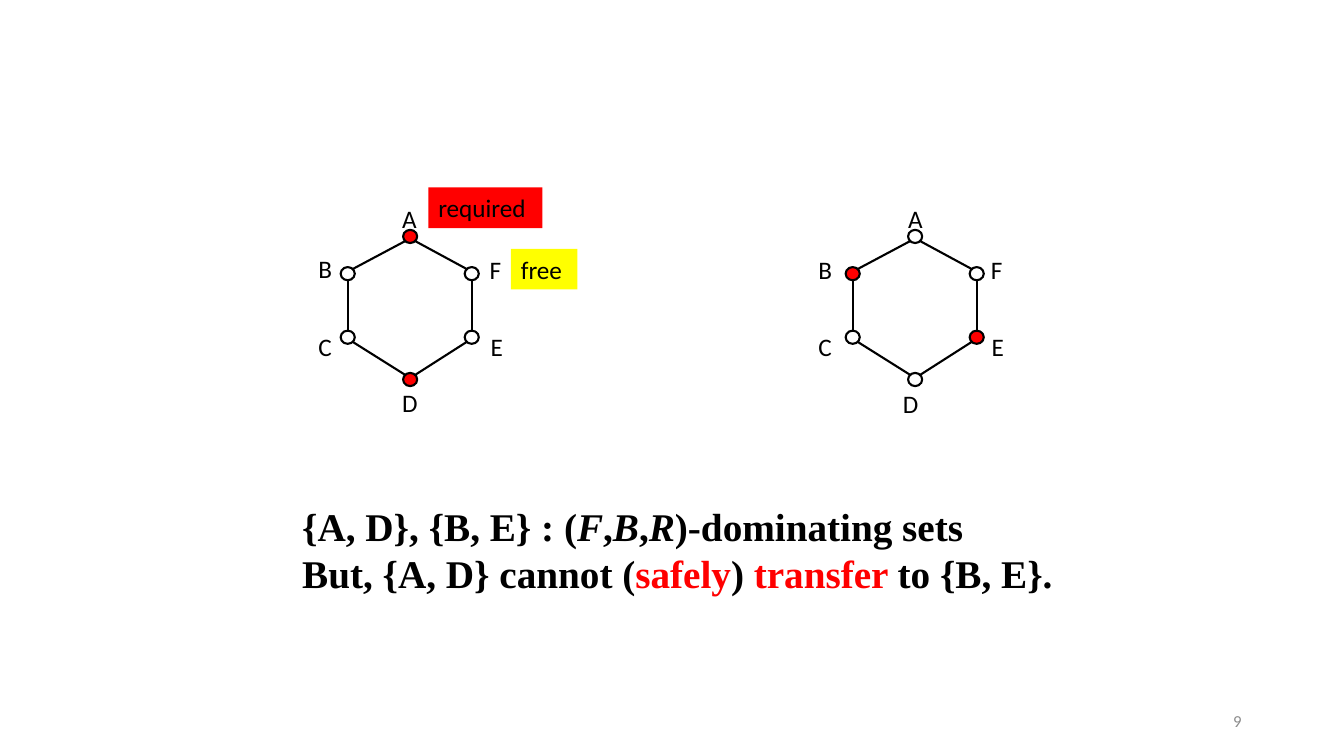
import math
import pptx
import pptx.util
import pptx.dml.color
import pptx.enum.shapes
import pptx.enum.text
import pptx.oxml

Pt = pptx.util.Pt
RGB = pptx.dml.color.RGBColor
Shape = pptx.enum.shapes.MSO_SHAPE
Align = pptx.enum.text.PP_ALIGN
Anchor = pptx.enum.text.MSO_ANCHOR

BLACK = RGB(0, 0, 0)
WHITE = RGB(255, 255, 255)
RED = RGB(255, 0, 0)
YELLOW = RGB(255, 255, 0)
GRAY = RGB(0x8C, 0x8C, 0x8C)

DOT_W, DOT_H = 10.1, 9.4
NODES = {
    "A": (49.6, 168.9), "B": (5, 195.5), "C": (5, 240.9),
    "D": (49.6, 271.1), "E": (93.6, 240.9), "F": (93.6, 195.5),
}
EDGES = ["AB", "AF", "BC", "FE", "CD", "ED"]
GRAPHS = [
    (243.4, "AD", {
        "A": (280.1, 141.8), "B": (220.3, 177.1), "C": (220.3, 233.3),
        "D": (280.1, 272.9), "E": (343.4, 233.3), "F": (342.7, 177.8)}),
    (604.1, "BE", {
        "A": (641.5, 141.8), "B": (577.4, 177.8), "C": (577.4, 233.3),
        "D": (637.9, 273.6), "E": (701.3, 233.3), "F": (700.6, 177.8)}),
]
TAGS = [
    ("free", (365, 177.8, 47.5, 29), YELLOW),
    ("required", (306, 133.9, 81.4, 29), RED),
]
CLAIM = [
    [("{A, D}, {B, E} : (", ""), ("F", "i"), (",", ""), ("B", "i"),
     (",", ""), ("R", "i"), (")-dominating sets", "")],
    [("But, {A, D} cannot (", ""), ("safely", "red"), (") ", ""),
     ("transfer ", "red"), ("to {B, E}.", "")],
]
PAGE = "9"

deck = pptx.Presentation()
deck.slide_width, deck.slide_height = Pt(960), Pt(540)
slide = deck.slides.add_slide(deck.slide_layouts[6])
shapes = slide.shapes


def style(par, size, color=BLACK, face="Calibri"):
    par.font.size = Pt(size)
    par.font.name = face
    par.font.color.rgb = color


def add_text(text, box, size=18, color=BLACK):
    frame = shapes.add_textbox(*map(Pt, box)).text_frame
    frame.word_wrap = True
    frame.text = text
    style(frame.paragraphs[0], size, color)
    return frame


def add_edge(left, start, end):
    (x1, y1), (x2, y2) = NODES[start], NODES[end]
    dx, dy = x2 - x1, y2 - y1
    reach = math.hypot(1, 1) / 4 if dx else 0.5
    gap_x = math.copysign(DOT_W * reach, dx) if dx else 0
    gap_y = math.copysign(DOT_H * reach, dy)
    line = shapes.add_connector(
        pptx.enum.shapes.MSO_CONNECTOR.STRAIGHT,
        Pt(left + x1 + gap_x), Pt(y1 + gap_y),
        Pt(left + x2 - gap_x), Pt(y2 - gap_y))
    line.line.color.rgb = BLACK
    line.line.width = Pt(1.5)
    line._element.spPr.append(pptx.oxml.parse_xml(
        '<a:effectLst xmlns:a='
        '"http://schemas.openxmlformats.org/drawingml/2006/main"/>'))


def add_dot(left, name, color):
    x, y = NODES[name]
    dot = shapes.add_shape(
        Shape.OVAL, Pt(left + x - DOT_W / 2), Pt(y - DOT_H / 2),
        Pt(DOT_W), Pt(DOT_H))
    dot.shadow.inherit = False
    dot.fill.solid()
    dot.fill.fore_color.rgb = color
    dot.line.color.rgb = BLACK
    dot.line.width = Pt(1.5)


def add_tag(text, box, color):
    tag = shapes.add_shape(Shape.RECTANGLE, *map(Pt, box))
    tag.shadow.inherit = False
    tag.fill.solid()
    tag.fill.fore_color.rgb = color
    tag.line.fill.background()
    frame = tag.text_frame
    frame.word_wrap = False
    frame.vertical_anchor = Anchor.TOP
    frame.text = text
    par = frame.paragraphs[0]
    par.alignment = Align.LEFT
    style(par, 18)


for left, chosen, labels in GRAPHS:
    for start, end in EDGES:
        add_edge(left, start, end)
    for name in NODES:
        add_dot(left, name, RED if name in chosen else WHITE)
    for name, spot in labels.items():
        add_text(name, (*spot, 26, 29))

claim = shapes.add_textbox(Pt(208.8), Pt(355), Pt(554.4), Pt(75)).text_frame
claim.word_wrap = True
for row, parts in enumerate(CLAIM):
    par = claim.add_paragraph() if row else claim.paragraphs[0]
    style(par, 28, face="Times New Roman")
    par.font.bold = True
    for text, look in parts:
        run = par.add_run()
        run.text = text
        run.font.size = Pt(28)
        run.font.name = "Times New Roman"
        run.font.bold = True
        run.font.italic = look == "i"
        run.font.color.rgb = RED if look == "red" else BLACK

for tag in TAGS:
    add_tag(*tag)

foot = add_text(PAGE, (678, 500.5, 216, 28.8), 12, GRAY)
foot.vertical_anchor = Anchor.MIDDLE
foot.paragraphs[0].alignment = Align.RIGHT

deck.save("out.pptx")
